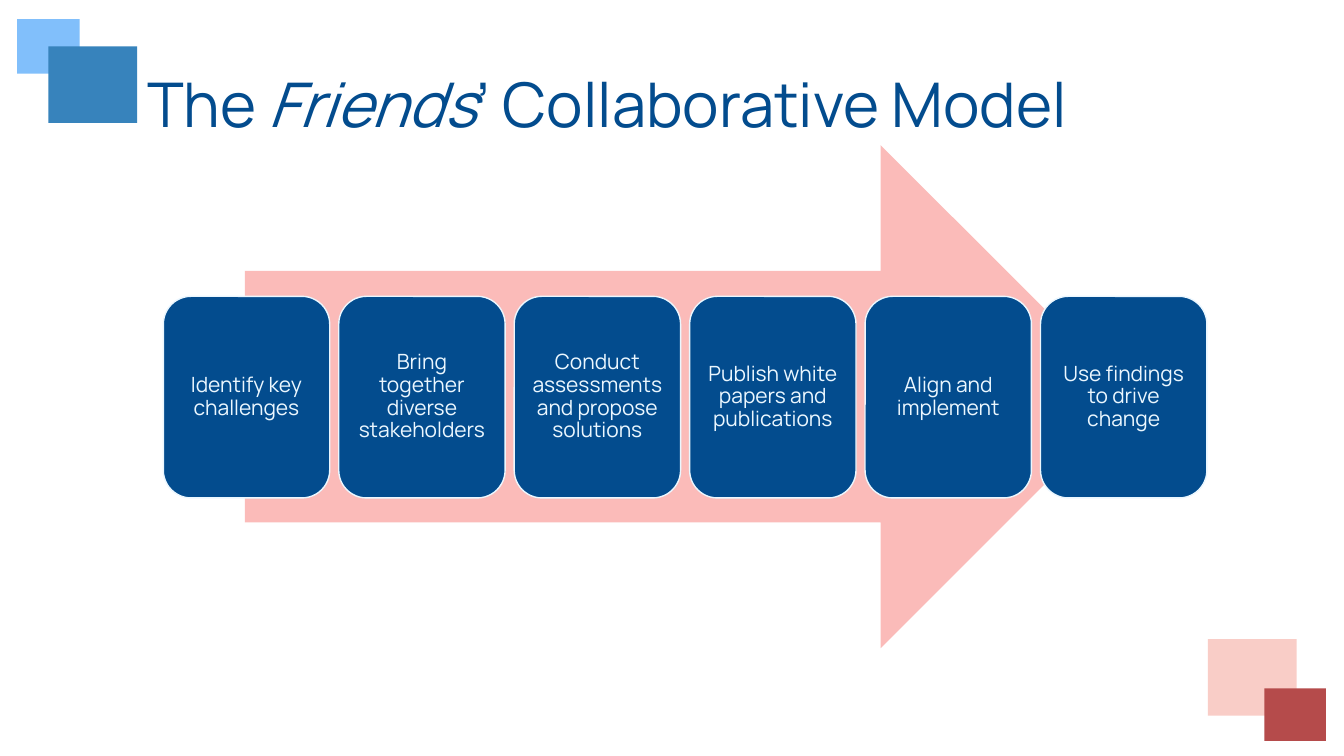
"""Build the collaborative model slide: six steps along a broad arrow."""
from dataclasses import dataclass

from pptx import Presentation
from pptx.dml.color import RGBColor
from pptx.enum.shapes import MSO_SHAPE as Shape
from pptx.enum.text import MSO_ANCHOR as Anchor, PP_ALIGN as Align
from pptx.util import Pt

PX = 9144
FONT = "Manrope"
COLORS = {
    "sky": "81BFFB",
    "steel": "3783BC",
    "blush": "F9CDC7",
    "brick": "B54B4B",
    "navy": "034C8E",
    "pink": "FBBBB9",
    "ice": "EBF7FF",
}


@dataclass(frozen=True)
class Box:
    left: int
    top: int
    width: int
    height: int

    def emu(self) -> tuple[int, ...]:
        return tuple(v * PX for v in (self.left, self.top, self.width, self.height))


@dataclass(frozen=True)
class Block:
    box: Box
    color: str
    kind: Shape = Shape.RECTANGLE


BLOCKS = [
    Block(Box(17, 19, 62, 54), "sky"),
    Block(Box(48, 46, 88, 76), "steel"),
    Block(Box(1198, 634, 88, 76), "blush"),
    Block(Box(1254, 683, 61, 52), "brick"),
    Block(Box(243, 144, 880, 499), "pink", Shape.RIGHT_ARROW),
]
TITLE_BOX = Box(136, 34, 1105, 145)
TITLE = [("The ", False), ("Friends", True), ("’ Collaborative Model", False)]
STEPS = [
    "Identify key challenges",
    "Bring together diverse stakeholders",
    "Conduct assessments and propose solutions",
    "Publish white papers and publications",
    "Align and implement",
    "Use findings to drive change",
]
FIRST_STEP = Box(162, 294, 165, 200)
STEP_PITCH = 174
STEP_INSET = 6


def rgb(name: str) -> RGBColor:
    return RGBColor.from_string(COLORS[name])


def style_paragraph(p, size: int, color: str) -> None:
    p.line_spacing = 0.9
    p.font.name = FONT
    p.font.size = Pt(size)
    p.font.color.rgb = rgb(color)


def add_block(s, block: Block):
    sp = s.shapes.add_shape(block.kind, *block.box.emu())
    sp.shadow.inherit = False
    sp.fill.solid()
    sp.fill.fore_color.rgb = rgb(block.color)
    sp.line.fill.background()
    return sp


def add_title(s) -> None:
    tf = s.shapes.add_textbox(*TITLE_BOX.emu()).text_frame
    tf.word_wrap = True
    tf.vertical_anchor = Anchor.MIDDLE
    p = tf.paragraphs[0]
    style_paragraph(p, 44, "navy")
    for text, italic in TITLE:
        r = p.add_run()
        r.text = text
        r.font.italic = italic


def add_step(s, index: int, text: str) -> None:
    first = FIRST_STEP
    box = Box(first.left + index * STEP_PITCH, first.top, first.width, first.height)
    sp = add_block(s, Block(box, "navy", Shape.ROUNDED_RECTANGLE))
    sp.line.color.rgb = rgb("ice")
    sp.line.width = Pt(1)
    tf = sp.text_frame
    tf.word_wrap = True
    tf.vertical_anchor = Anchor.MIDDLE
    tf.margin_left = tf.margin_right = STEP_INSET * PX
    tf.margin_top = tf.margin_bottom = STEP_INSET * PX
    p = tf.paragraphs[0]
    p.text = text
    p.alignment = Align.CENTER
    style_paragraph(p, 15, "ice")


def main() -> None:
    prs = Presentation()
    prs.slide_width, prs.slide_height = 1333 * PX, 750 * PX
    s = prs.slides.add_slide(prs.slide_layouts[6])
    for block in BLOCKS:
        add_block(s, block)
    add_title(s)
    for index, text in enumerate(STEPS):
        add_step(s, index, text)
    prs.save("out.pptx")


if __name__ == "__main__":
    main()
